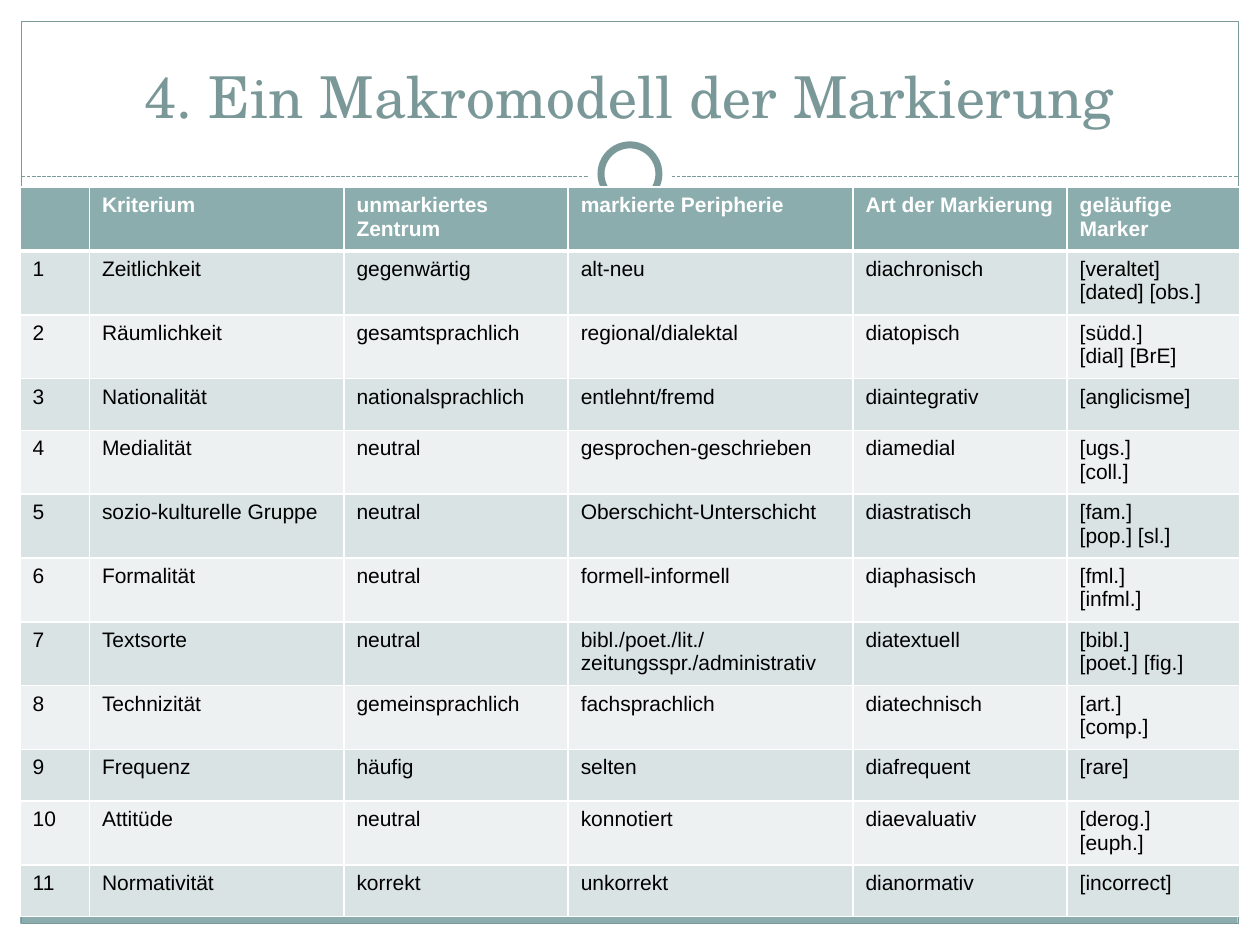
from lxml.etree import SubElement as Sub, Element
from pptx import Presentation
from pptx.dml.color import RGBColor
from pptx.enum.dml import MSO_LINE as Dash
from pptx.enum.shapes import MSO_CONNECTOR as Conn, MSO_SHAPE as Kind
from pptx.enum.text import MSO_ANCHOR as Anchor, PP_ALIGN as Align
from pptx.oxml.ns import qn
from pptx.util import Inches, Pt

WHITE, TEAL, EDGE = "FFFFFF", "8CADAE", "7C999A"
BANDS = ("EEF1F2", "DAE3E3")

HEAD = ("", "Kriterium", "unmarkiertes Zentrum", "markierte Peripherie",
        "Art der Markierung", "geläufige Marker")
BODY = (
    ("Zeitlichkeit", "gegenwärtig", "alt-neu", "diachronisch", "[veraltet]\n[dated] [obs.]"),
    ("Räumlichkeit", "gesamtsprachlich", "regional/dialektal", "diatopisch",
     "[südd.]\n[dial] [BrE]"),
    ("Nationalität", "nationalsprachlich", "entlehnt/fremd", "diaintegrativ", "[anglicisme]"),
    ("Medialität", "neutral", "gesprochen-geschrieben", "diamedial", "[ugs.]\n[coll.]"),
    ("sozio-kulturelle Gruppe", "neutral", "Oberschicht-Unterschicht", "diastratisch",
     "[fam.]\n[pop.] [sl.]"),
    ("Formalität", "neutral", "formell-informell", "diaphasisch", "[fml.]\n[infml.]"),
    ("Textsorte", "neutral", "bibl./poet./lit./\nzeitungsspr./administrativ", "diatextuell",
     "[bibl.]\n[poet.] [fig.]"),
    ("Technizität", "gemeinsprachlich", "fachsprachlich", "diatechnisch", "[art.]\n[comp.]"),
    ("Frequenz", "häufig", "selten", "diafrequent", "[rare]"),
    ("Attitüde", "neutral", "konnotiert", "diaevaluativ", "[derog.]\n[euph.]"),
    ("Normativität", "korrekt", "unkorrekt", "dianormativ", "[incorrect]"),
)
ROWS = [HEAD] + [(str(n), *row) for n, row in enumerate(BODY, 1)]


def tint(code):
    return RGBColor.from_string(code)


def unit(count):
    """Length of a number of cells in a grid of 100 columns by 75 rows."""
    return Inches(count / 10)


class Page:
    def __init__(self, deck, back):
        self.slide = deck.slides.add_slide(deck.slide_layouts[5])
        self.shapes = self.slide.shapes
        fill = self.slide.background.fill
        fill.solid()
        fill.fore_color.rgb = tint(back)

    def font(self, frame, face, size, color, bold=False):
        for para in frame.paragraphs:
            for run in para.runs:
                run.font.name, run.font.size = face, Pt(size)
                run.font.color.rgb, run.font.bold = tint(color), bold

    def shape(self, box, fill=None, line=None, kind=Kind.RECTANGLE):
        item = self.shapes.add_shape(kind, *map(unit, box))
        item.shadow.inherit = False
        if fill:
            item.fill.solid()
            item.fill.fore_color.rgb = tint(fill)
        else:
            item.fill.background()
        if line:
            item.line.color.rgb, item.line.width = tint(EDGE), Pt(line)
        else:
            item.line.fill.background()

    def ring(self, x, y, size, line=None):
        box = (x - size / 2, y - size / 2, size, size)
        self.shape(box, WHITE, line, Kind.OVAL)

    def rule(self, left, right, y):
        item = self.shapes.add_connector(Conn.STRAIGHT, *map(unit, (left, y, right, y)))
        item.line.color.rgb, item.line.width = tint(EDGE), Pt(0.75)
        item.line.dash_style = Dash.SQUARE_DOT
        Sub(item._element.spPr, qn("a:effectLst"))

    def title(self, text, box):
        item = self.shapes.title
        item.left, item.top, item.width, item.height = map(unit, box)
        frame = item.text_frame
        frame.text = text
        frame.vertical_anchor = Anchor.BOTTOM
        frame.paragraphs[0].alignment = Align.CENTER
        self.font(frame, "TeX Gyre Schola", 33, "7B9899")
        self.shapes._spTree.append(item._element)  # bring above the frame

    def border(self, cell, top, bottom):
        props = cell._tc.get_or_add_tcPr()
        sides = {"L": 1, "R": 1, "T": top, "B": bottom}
        for spot, (side, width) in enumerate(sides.items()):
            line = Element(qn("a:ln" + side), w=str(Pt(width)))
            Sub(Sub(line, qn("a:solidFill")), qn("a:srgbClr"), val=WHITE)
            props.insert(spot, line)

    def table(self, rows, left, top, cols, tall):
        area = (left, top, sum(cols), sum(tall))
        grid = self.shapes.add_table(len(rows), len(cols), *map(unit, area)).table
        for col, width in zip(grid.columns, cols):
            col.width = unit(width)
        for r, row in enumerate(rows):
            grid.rows[r].height = unit(tall[r])
            for c, text in enumerate(row):
                cell = grid.cell(r, c)
                cell.text = text
                self.font(cell.text_frame, "Arial", 12,
                          "000000" if r else WHITE, r == 0)
                cell.fill.solid()
                cell.fill.fore_color.rgb = tint(BANDS[r % 2] if r else TEAL)
                self.border(cell, 3 if r == 1 else 1, 1 if r else 3)


def main():
    deck = Presentation()
    deck.slide_width, deck.slide_height = unit(100), unit(75)
    page = Page(deck, "C5D1D7")

    # White margins around the page
    for box in ((0, 73.3, 100, 1.7), (0, 0, 100, 15.2),
                (0, 0, 1.7, 75), (98.3, 0, 1.7, 75)):
        page.shape(box, WHITE)

    # Footer band, frame, dashed rule and ring
    page.shape((1.6, 69.9, 96.6, 3.4), TEAL)
    page.shape((1.7, 1.7, 96.6, 71.6), line=0.75)
    page.rule(1.7, 98.3, 14)
    page.ring(50, 13.8, 6.7)
    page.ring(50, 13.8, 4.6, 4)

    # Title and table
    page.title("4. Ein Makromodell der Markierung", (3.3, 2.5, 93.3, 8.3))
    short = (3, 9, 11)
    tall = [4.1 if r in short else 5.07 for r in range(len(ROWS))]
    page.table(ROWS, 1.6, 14.85, (5.5, 20.2, 17.8, 22.6, 17, 13.7), tall)

    deck.save("out.pptx")


if __name__ == "__main__":
    main()
